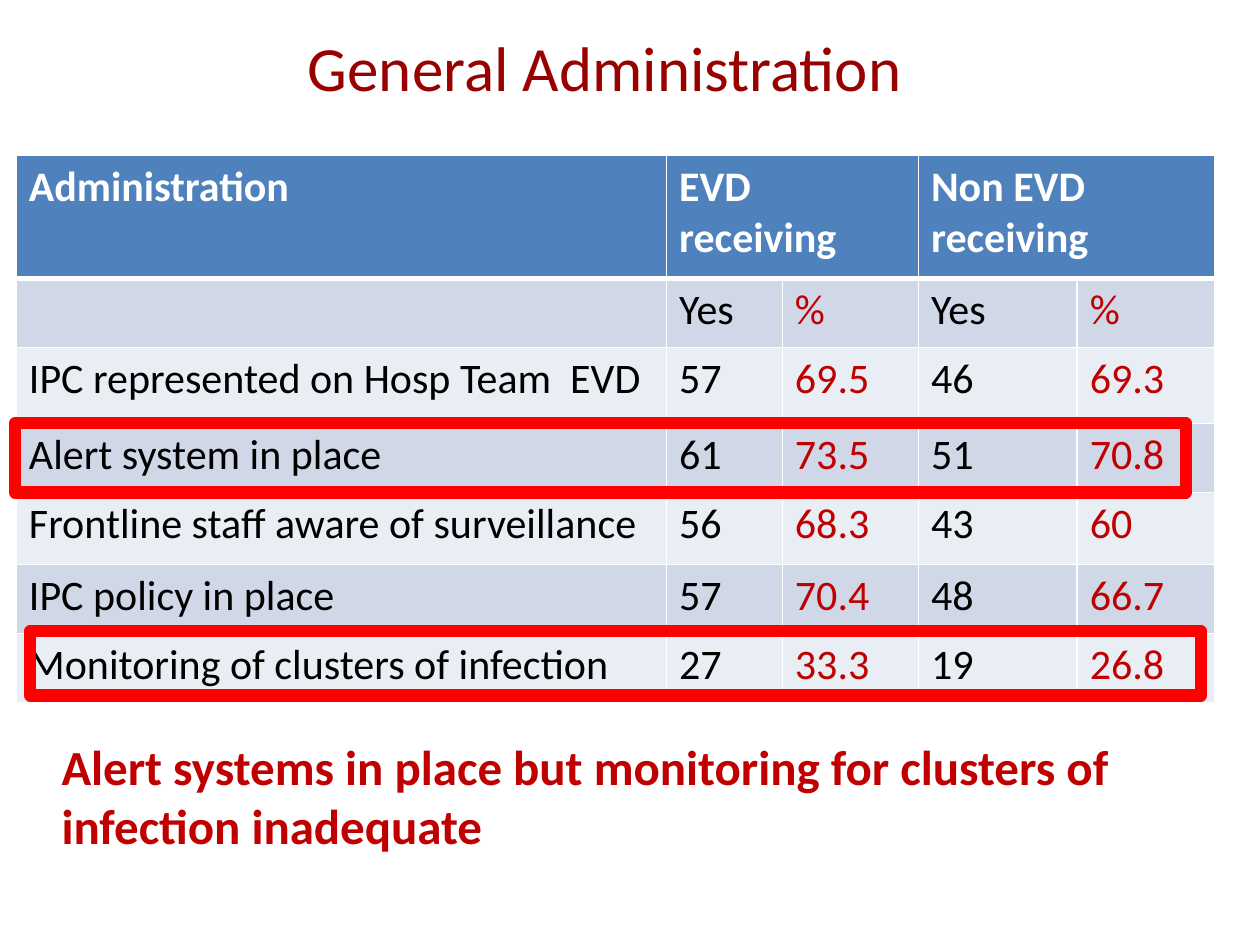
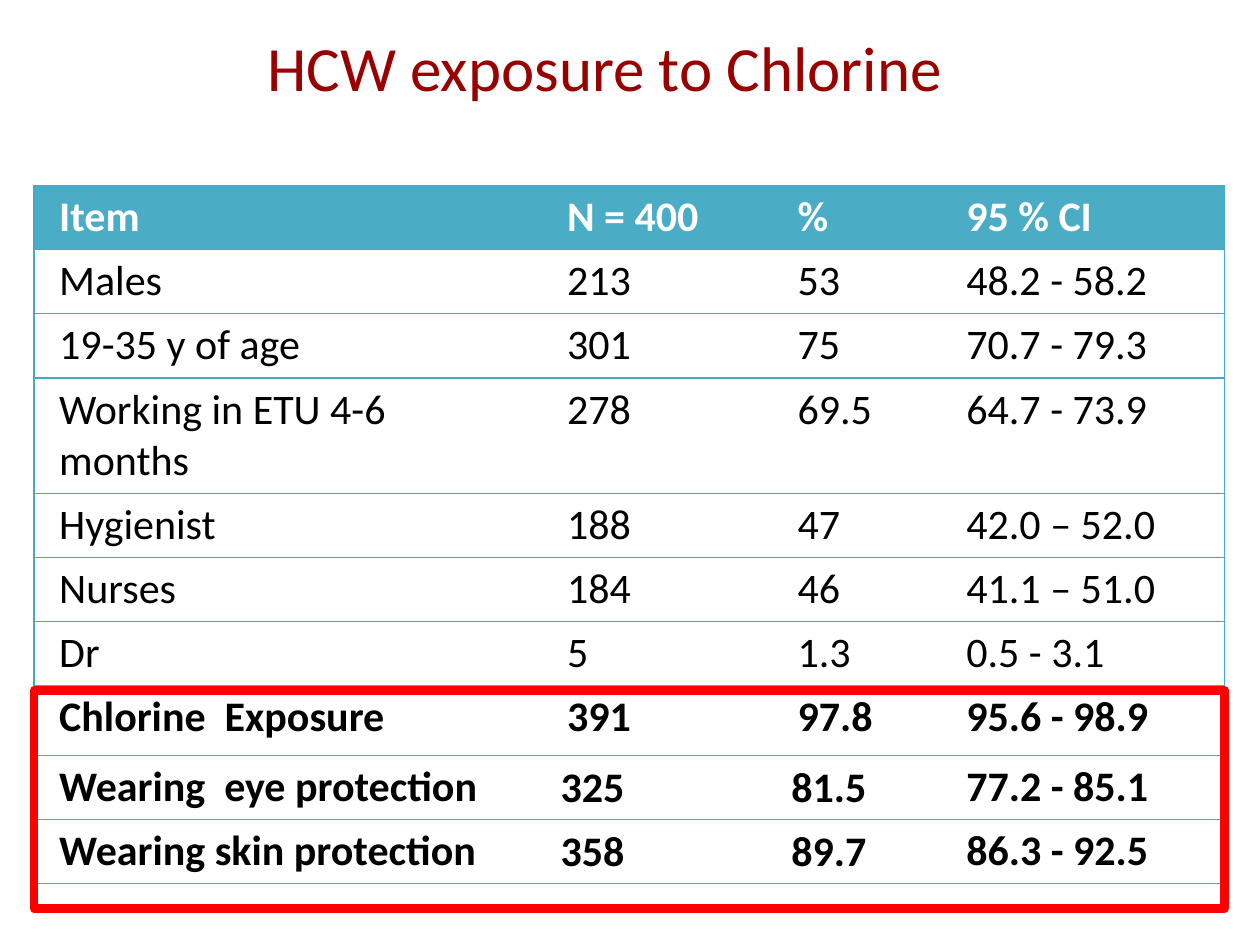
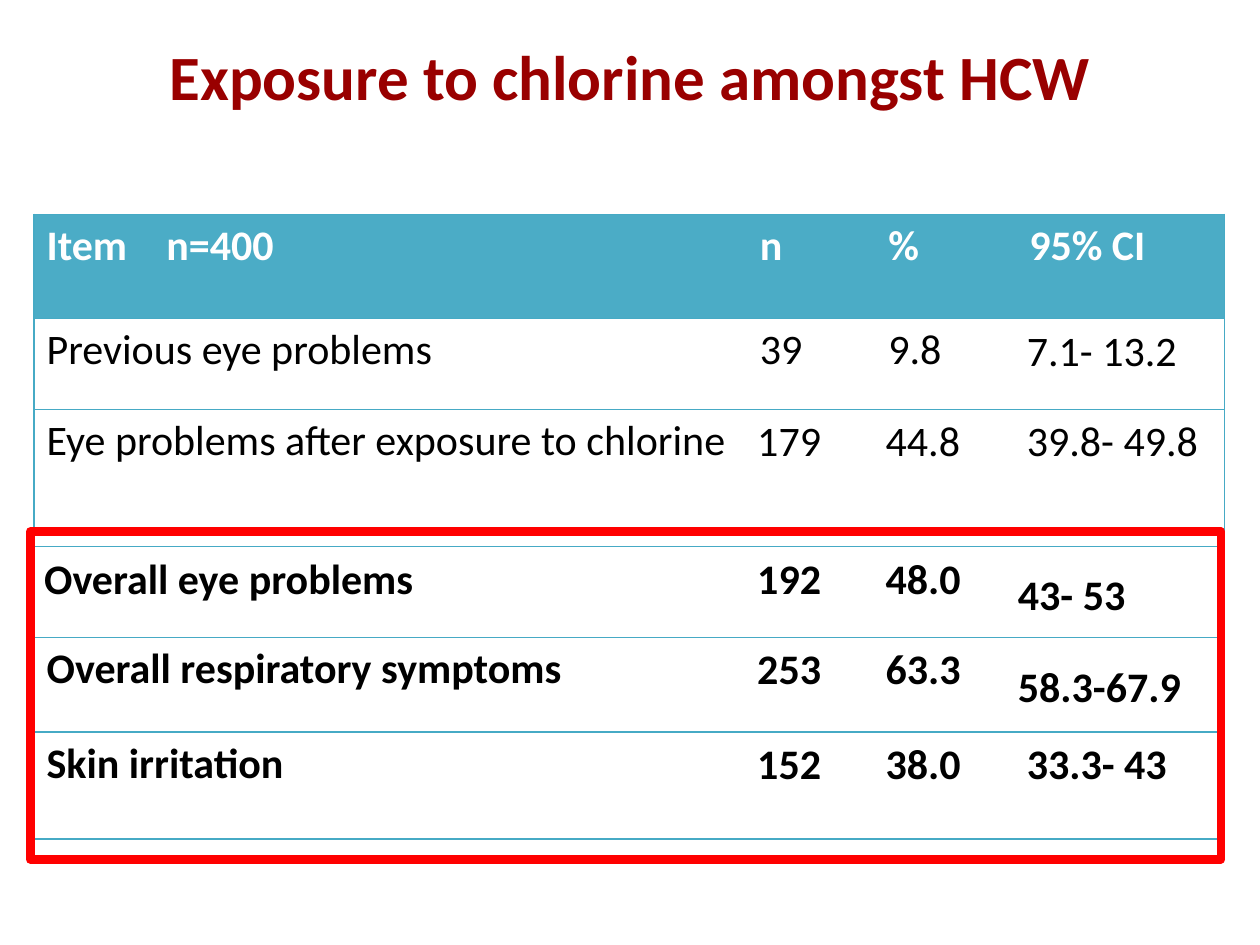
from dataclasses import dataclass, field
from typing import Any

from lxml.etree import SubElement
from pptx import Presentation
from pptx.dml.color import RGBColor
from pptx.enum.shapes import MSO_SHAPE
from pptx.enum.text import MSO_ANCHOR, PP_ALIGN
from pptx.oxml.ns import qn
from pptx.util import Inches, Pt

FONT = "Calibri"
TITLE_RED, RED, FRAME_RED = "990000", "C00000", "FF0000"
WHITE, BLACK = "FFFFFF", "000000"
BLUE, BAND_DARK, BAND_LIGHT = "4F81BD", "D0D8E8", "E9EDF4"
TEAL, TEAL_LINE = "4BACC6", "46AAC5"
TAB_STOP = Inches(0.95)

Box = tuple[float, float, float, float]


@dataclass(frozen=True)
class CellStyle:
    """Insets and paragraph format of a table cell."""
    side: float
    top: float
    para: dict[str, Any] = field(default_factory=dict)
    anchor: MSO_ANCHOR = MSO_ANCHOR.TOP


NORMAL = CellStyle(0.1, 0.05)
WIDE = CellStyle(0.2, 0.05)
WIDE_TIGHT = CellStyle(0.15, 0, {"line_spacing": 1.15})
TIGHT = CellStyle(0.08, 0, {"line_spacing": 1.15})
MIDDLE = CellStyle(0.01, 0.01, {"line_spacing": 1.15, "space_after": Pt(10)}, MSO_ANCHOR.MIDDLE)


@dataclass(frozen=True)
class TableSpec:
    """Contents and look of one table."""
    box: Box
    cols: list[float]
    heights: list[float]
    rows: list[list[str]]
    header: str
    bands: tuple[str, ...] = ()
    style: CellStyle = NORMAL
    special: dict[tuple[int, int], CellStyle] = field(default_factory=dict)
    bold_from: int = 99
    red_cols: tuple[int, ...] = ()
    merges: tuple[tuple[int, int], ...] = ()


@dataclass(frozen=True)
class SlideSpec:
    """Title, table and highlight frames of one slide."""
    title: str
    title_box: Box
    table: TableSpec
    frames: list[Box]
    frame_width: float
    title_bold: bool = False
    message: str = ""


def rgb(color: str) -> RGBColor:
    """Turn a hex string into a colour."""
    return RGBColor.from_string(color)


def place(box: Box) -> list[int]:
    """Convert a box in inches to lengths."""
    return [Inches(v) for v in box]


def set_attrs(target: Any, values: dict[str, Any]) -> None:
    """Set every attribute named in values."""
    for name, value in values.items():
        setattr(target, name, value)


def write(p: Any, text: str, size: float, color: str, bold: bool) -> None:
    """Add one formatted run, with a tab stop where the text has a tab."""
    if "\t" in text:
        tabs = SubElement(p._p.get_or_add_pPr(), qn("a:tabLst"))
        SubElement(tabs, qn("a:tab"), pos=str(TAB_STOP), algn="l")
    r = p.add_run()
    r.text = text
    set_attrs(r.font, {"name": FONT, "size": Pt(size), "bold": bold})
    r.font.color.rgb = rgb(color)


def add_border(cell: Any, side: str, color: str, width: float) -> None:
    """Draw one side of a cell, or leave it blank at zero width."""
    ln = SubElement(cell._tc.get_or_add_tcPr(), qn(f"a:ln{side}"), w=str(Pt(width)))
    if width:
        fill = SubElement(ln, qn("a:solidFill"))
        SubElement(fill, qn("a:srgbClr"), val=color)
    else:
        SubElement(ln, qn("a:noFill"))


def border_width(spec: TableSpec, row: int, col: int, side: str) -> float:
    """Give the width of a cell side by its place in the table."""
    if spec.bands:
        return 3 if (row, side) in ((0, "B"), (1, "T")) else 1
    outer = {"L": col == 0, "R": col == len(spec.cols) - 1}
    return 0.75 if outer.get(side, True) else 0


def fill_cell(cell: Any, spec: TableSpec, row: int, col: int) -> None:
    """Style one cell and write its text."""
    style = spec.special.get((row, col), spec.style)
    set_attrs(cell, {"margin_left": Inches(style.side), "margin_right": Inches(style.side),
                     "margin_top": Inches(style.top), "margin_bottom": Inches(style.top),
                     "vertical_anchor": style.anchor})
    for side in "LRTB":
        add_border(cell, side, WHITE if spec.bands else TEAL_LINE, border_width(spec, row, col, side))
    if row and not spec.bands:
        cell.fill.background()
    else:
        cell.fill.solid()
        color = spec.bands[(row - 1) % len(spec.bands)] if row else spec.header
        cell.fill.fore_color.rgb = rgb(color)
    text = spec.rows[row][col]
    if text:
        p = cell.text_frame.paragraphs[0]
        set_attrs(p, style.para)
        body = RED if col in spec.red_cols else BLACK
        write(p, text, 24, body if row else WHITE, row == 0 or row >= spec.bold_from)


def add_table(slide: Any, spec: TableSpec) -> None:
    """Add a table with its own fills and borders."""
    table = slide.shapes.add_table(len(spec.rows), len(spec.cols), *place(spec.box)).table
    set_attrs(table, {"first_row": False, "horz_banding": False})
    for column, width in zip(table.columns, spec.cols):
        column.width = Inches(width)
    for row, height in zip(table.rows, spec.heights):
        row.height = Inches(height)
    for first, last in spec.merges:
        table.cell(0, first).merge(table.cell(0, last))
    for row in range(len(spec.rows)):
        for col in range(len(spec.cols)):
            fill_cell(table.cell(row, col), spec, row, col)


def add_title(slide: Any, spec: SlideSpec) -> None:
    """Move the title placeholder and write the title."""
    sp = slide.shapes.title
    set_attrs(sp, dict(zip(("left", "top", "width", "height"), place(spec.title_box))))
    tf = sp.text_frame
    set_attrs(tf, {"word_wrap": True, "vertical_anchor": MSO_ANCHOR.MIDDLE})
    p = tf.paragraphs[0]
    p.alignment = PP_ALIGN.CENTER
    write(p, spec.title, 36, TITLE_RED, spec.title_bold)


def add_frame(slide: Any, box: Box, width: float) -> None:
    """Outline the rows that matter."""
    sp = slide.shapes.add_shape(MSO_SHAPE.RECTANGLE, *place(box))
    sp.shadow.inherit = False
    sp.fill.background()
    sp.line.color.rgb = rgb(FRAME_RED)
    sp.line.width = Pt(width)


def add_message(slide: Any, text: str) -> None:
    """Write the conclusion under the table."""
    tf = slide.shapes.add_textbox(*place((0.39, 5.8, 9.06, 1.04))).text_frame
    tf.word_wrap = True
    write(tf.paragraphs[0], text, 28, RED, True)


def add_slide(prs: Any, spec: SlideSpec) -> None:
    """Build one slide."""
    slide = prs.slides.add_slide(prs.slide_layouts[5])
    add_title(slide, spec)
    add_table(slide, spec.table)
    for box in spec.frames:
        add_frame(slide, box, spec.frame_width)
    if spec.message:
        add_message(slide, spec.message)


ADMINISTRATION = TableSpec(
    box=(0.13, 1.23, 9.51, 4.33),
    cols=[5.16, 0.92, 1.08, 1.26, 1.09],
    heights=[0.98, 0.55, 0.6, 0.55, 0.57, 0.55, 0.55],
    rows=[
        ["Administration", "EVD receiving", "", "Non EVD receiving", ""],
        ["", "Yes", "%", "Yes", "%"],
        ["IPC represented on Hosp Team  EVD", "57", "69.5", "46", "69.3"],
        ["Alert system in place", "61", "73.5", "51", "70.8"],
        ["Frontline staff aware of surveillance", "56", "68.3", "43", "60"],
        ["IPC policy in place", "57", "70.4", "48", "66.7"],
        ["Monitoring of clusters of infection", "27", "33.3", "19", "26.8"],
    ],
    header=BLUE, bands=(BAND_DARK, BAND_LIGHT), red_cols=(2, 4), merges=((1, 2), (3, 4)),
)

CHLORINE = TableSpec(
    box=(0.27, 1.47, 9.45, 5.62),
    cols=[4.03, 1.83, 1.34, 2.25],
    heights=[0.51] * 3 + [0.91] + [0.51] * 3 + [0.55] + [0.51] * 2,
    rows=[
        ["Item", "N = 400", "%", "95 % CI"],
        ["Males", "213", "53", "48.2 - 58.2"],
        ["19-35 y of age", "301", "75", "70.7 - 79.3"],
        ["Working in ETU 4-6 months", "278", "69.5", "64.7 - 73.9"],
        ["Hygienist", "188", "47", "42.0 – 52.0"],
        ["Nurses", "184", "46", "41.1 – 51.0"],
        ["Dr", "5", "1.3", "0.5 - 3.1"],
        ["Chlorine  Exposure", "391", "97.8", "95.6 - 98.9"],
        ["Wearing  eye protection", "325", "81.5", "77.2 - 85.1"],
        ["Wearing skin protection", "358", "89.7", "86.3 - 92.5"],
    ],
    header=TEAL, style=WIDE, bold_from=7,
    special={(row, col): WIDE_TIGHT for row in (8, 9) for col in (1, 2)},
)

SYMPTOMS = TableSpec(
    box=(0.27, 1.7, 9.45, 4.96),
    cols=[5.66, 1.02, 1.12, 1.65],
    heights=[0.83, 0.72, 1.09, 0.72, 0.75, 0.85],
    rows=[
        ["Item\tn=400", "n", "%", "95% CI"],
        ["Previous eye problems", "39", "9.8", "7.1- 13.2"],
        ["Eye problems after exposure to chlorine", "179", "44.8", "39.8- 49.8"],
        ["Overall eye problems", "192", "48.0", "43- 53"],
        ["Overall respiratory symptoms", "253", "63.3", "58.3-67.9"],
        ["Skin irritation", "152", "38.0", "33.3- 43"],
    ],
    header=TEAL, bold_from=3,
    special={(row, col): TIGHT for row in range(2, 6) for col in (1, 2, 3)}
    | {(1, 3): TIGHT, (3, 0): TIGHT, (3, 3): MIDDLE, (4, 3): MIDDLE},
)

TITLE_BOX = (0.9, 0.13, 7.8, 0.79)

SLIDES = [
    SlideSpec("General Administration", TITLE_BOX, ADMINISTRATION,
              [(0.12, 3.36, 9.29, 0.55), (0.24, 5.01, 9.29, 0.51)], 7,
              message="Alert systems in place but monitoring for clusters of infection inadequate"),
    SlideSpec("HCW exposure to Chlorine", TITLE_BOX, CHLORINE, [(0.27, 5.48, 9.45, 1.73)], 5),
    SlideSpec("Exposure to chlorine amongst HCW", (0.5, -0.03, 9, 1.25), SYMPTOMS,
              [(0.24, 4.22, 9.45, 2.6)], 5, title_bold=True),
]


def main() -> None:
    """Build and save the presentation."""
    prs = Presentation()
    set_attrs(prs, {"slide_width": Inches(10), "slide_height": Inches(7.5)})
    for spec in SLIDES:
        add_slide(prs, spec)
    prs.save("out.pptx")


if __name__ == "__main__":
    main()
